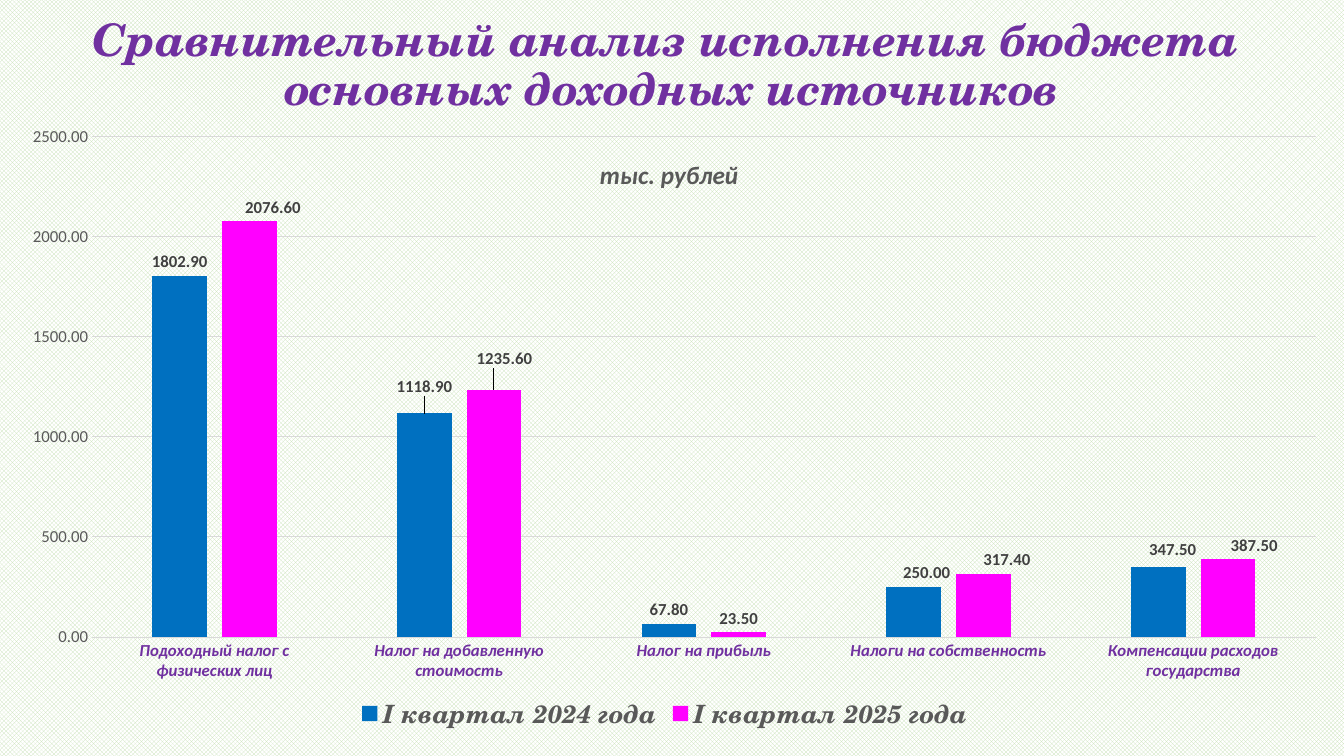
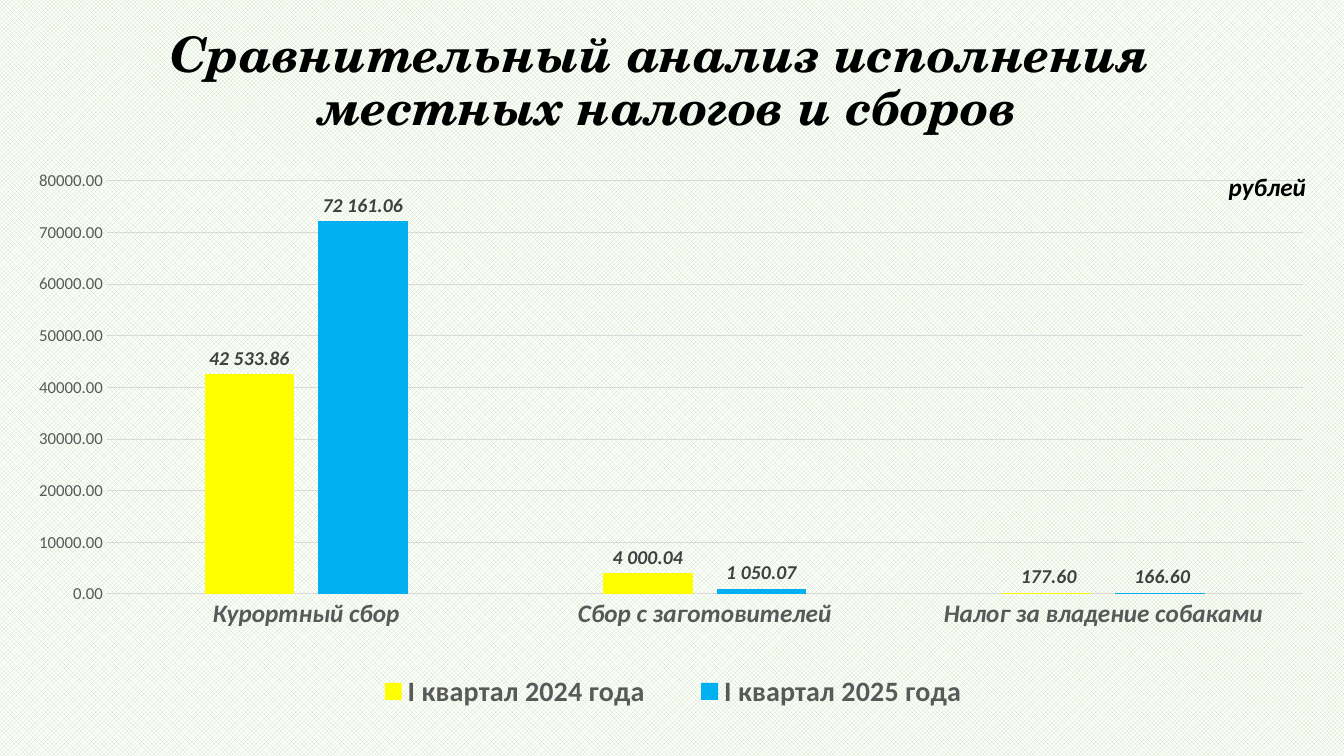
"""Build two slides comparing budget revenues of the first quarters of 2024 and 2025."""
from dataclasses import dataclass, field

import lxml.etree
import pptx
import pptx.chart.chart
import pptx.chart.data
import pptx.dml.color
import pptx.enum.chart
import pptx.enum.dml
import pptx.enum.text
import pptx.oxml.ns
import pptx.slide
import pptx.text.text
import pptx.util

RGBColor = pptx.dml.color.RGBColor
Cm = pptx.util.Cm
Pt = pptx.util.Pt

BLACK = RGBColor(0x00, 0x00, 0x00)
WHITE = RGBColor(0xFF, 0xFF, 0xFF)
PALE_GREEN = RGBColor(0xC5, 0xE0, 0xB4)
PURPLE = RGBColor(0x70, 0x30, 0xA0)
GRAY = RGBColor(0x59, 0x59, 0x59)
DARK_GRAY = RGBColor(0x40, 0x40, 0x40)
LIGHT_GRAY = RGBColor(0xD9, 0xD9, 0xD9)
BLUE = RGBColor(0x00, 0x70, 0xC0)
MAGENTA = RGBColor(0xFF, 0x00, 0xFF)
YELLOW = RGBColor(0xFF, 0xFF, 0x00)
SKY_BLUE = RGBColor(0x00, 0xB0, 0xF0)

BODY_FONT = "Calibri"
DISPLAY_FONT = "TeX Gyre Schola"
AXIS_FORMAT = "0.00"
PERIODS = ("I квартал 2024 года", "I квартал 2025 года")

Box = tuple[float, float, float, float]


@dataclass(frozen=True)
class TextStyle:
    """Character formatting of one kind of text."""
    size: float
    color: RGBColor
    bold: bool = True
    italic: bool = True
    name: str = BODY_FONT


@dataclass(frozen=True)
class Series:
    """Values of one period, with label offsets by point."""
    values: tuple[float, ...]
    color: RGBColor
    label_offsets: dict[int, tuple[float, float]] = field(default_factory=dict)


@dataclass(frozen=True)
class ChartSlide:
    """Content and geometry of one slide, boxes in centimetres."""
    title_lines: tuple[str, ...]
    title_style: TextStyle
    title_box: Box
    chart_box: Box
    plot_layout: Box
    unit: str
    unit_style: TextStyle
    unit_position: tuple[float, float]
    categories: tuple[str, ...]
    series: tuple[Series, ...]
    axis_maximum: float
    axis_step: float
    category_style: TextStyle
    label_style: TextStyle
    label_format: str
    legend_style: TextStyle
    legend_layout: Box | None = None


SLIDES = (
    ChartSlide(
        title_lines=("Сравнительный анализ исполнения бюджета ", "основных доходных источников"),
        title_style=TextStyle(32, PURPLE, name=DISPLAY_FONT),
        title_box=(0, 0, 33.87, 3.35),
        chart_box=(0.28, 3, 32.94, 15.6),
        plot_layout=(0.062, 0.028, 0.936, 0.809),
        unit="тыс. рублей",
        unit_style=TextStyle(18, GRAY),
        unit_position=(0.447, 0.055),
        categories=(
            "Подоходный налог с физических лиц",
            "Налог на добавленную стоимость",
            "Налог на прибыль",
            "Налоги на собственность",
            "Компенсации расходов государства",
        ),
        series=(
            Series((1802.9, 1118.9, 67.8, 250, 347.5), BLUE,
                   {1: (0, -0.02), 3: (0.01, 0), 4: (0.011, -0.006)}),
            Series((2076.6, 1235.6, 23.5, 317.4, 387.5), MAGENTA,
                   {0: (0.018, 0), 1: (0.008, -0.027), 3: (0.018, 0), 4: (0.02, 0)}),
        ),
        axis_maximum=2500,
        axis_step=500,
        category_style=TextStyle(12, PURPLE),
        label_style=TextStyle(12, DARK_GRAY, italic=False),
        label_format="0.00",
        legend_style=TextStyle(18, GRAY, name=DISPLAY_FONT),
    ),
    ChartSlide(
        title_lines=("Сравнительный анализ исполнения ", "местных налогов и сборов"),
        title_style=TextStyle(35, BLACK, name=DISPLAY_FONT),
        title_box=(1.09, 0, 31.47, 4.17),
        chart_box=(0.71, 3.81, 32.51, 14.96),
        plot_layout=(0.061, 0.05, 0.927, 0.696),
        unit="рублей",
        unit_style=TextStyle(18, BLACK),
        unit_position=(0.927, 0.023),
        categories=("Курортный сбор", "Сбор с заготовителей", "Налог за владение собаками"),
        series=(
            Series((42533.86, 4000.04, 177.6), YELLOW),
            Series((72161.06, 1050.07, 166.6), SKY_BLUE),
        ),
        axis_maximum=80000,
        axis_step=10000,
        category_style=TextStyle(18, GRAY),
        label_style=TextStyle(14, DARK_GRAY),
        label_format='#" "##0.00',
        legend_style=TextStyle(20, GRAY, italic=False),
        legend_layout=(0.24, 0.87, 0.52, 0.08),
    ),
)


def apply_style(font: pptx.text.text.Font, style: TextStyle) -> None:
    """Apply a text style to a font."""
    font.name = style.name
    font.size = Pt(style.size)
    font.bold = style.bold
    font.italic = style.italic
    font.color.rgb = style.color


def set_layout(parent: lxml.etree.ElementBase, predecessor: str | None,
               values: tuple[float, ...], edge: bool = True, inner: bool = False) -> None:
    """Give a chart part a manual layout, placed after the named child."""
    qn = pptx.oxml.ns.qn
    for old_layout in parent.findall(qn("c:layout")):
        parent.remove(old_layout)
    layout = lxml.etree.Element(qn("c:layout"))
    manual = lxml.etree.SubElement(layout, qn("c:manualLayout"))
    settings = [("layoutTarget", "inner")] if inner else []
    if edge:
        settings += [("xMode", "edge"), ("yMode", "edge")]
    settings += zip("xywh", map(str, values))
    for tag, value in settings:
        lxml.etree.SubElement(manual, qn(f"c:{tag}")).set("val", value)
    if predecessor is None:
        parent.insert(0, layout)
    else:
        parent.find(qn(predecessor)).addnext(layout)


def add_title(slide: pptx.slide.Slide, content: ChartSlide) -> None:
    """Add the centred slide title."""
    text_frame = slide.shapes.add_textbox(*map(Cm, content.title_box)).text_frame
    text_frame.word_wrap = True
    text_frame.vertical_anchor = pptx.enum.text.MSO_ANCHOR.MIDDLE
    paragraph = text_frame.paragraphs[0]
    paragraph.alignment = pptx.enum.text.PP_ALIGN.CENTER
    paragraph.line_spacing = 0.9
    for index, line in enumerate(content.title_lines):
        if index:
            paragraph.add_line_break()
        run = paragraph.add_run()
        run.text = line
        apply_style(run.font, content.title_style)


def format_axes(chart: pptx.chart.chart.Chart, content: ChartSlide) -> None:
    """Format both axes and the gridlines."""
    category_axis, value_axis = chart.category_axis, chart.value_axis
    value_style = TextStyle(12, GRAY, bold=False, italic=False)
    for axis, style in ((category_axis, content.category_style), (value_axis, value_style)):
        axis.major_tick_mark = pptx.enum.chart.XL_TICK_MARK.NONE
        axis.minor_tick_mark = pptx.enum.chart.XL_TICK_MARK.NONE
        apply_style(axis.tick_labels.font, style)
    value_axis.minimum_scale = 0
    value_axis.maximum_scale = content.axis_maximum
    value_axis.major_unit = content.axis_step
    value_axis.tick_labels.number_format = AXIS_FORMAT
    value_axis.tick_labels.number_format_is_linked = False
    value_axis.format.line.fill.background()
    value_axis.has_major_gridlines = True
    for line in (category_axis.format.line, value_axis.major_gridlines.format.line):
        line.color.rgb = LIGHT_GRAY
        line.width = Pt(0.75)


def format_series(chart: pptx.chart.chart.Chart, content: ChartSlide) -> None:
    """Colour the columns and place their value labels."""
    outside_end = pptx.enum.chart.XL_LABEL_POSITION.OUTSIDE_END
    plot = chart.plots[0]
    plot.gap_width = 219
    plot.overlap = -27
    plot.vary_by_categories = False
    for number, (series, data) in enumerate(zip(plot.series, content.series)):
        series.format.fill.solid()
        series.format.fill.fore_color.rgb = data.color
        series.invert_if_negative = False
        labels = series.data_labels
        labels.show_value = True
        labels.position = outside_end
        labels.number_format = content.label_format
        labels.number_format_is_linked = False
        apply_style(labels.font, content.label_style)
        for point, offset in data.label_offsets.items():
            label = series.points[point].data_label
            apply_style(label.font, content.label_style)
            label.position = outside_end
            element = chart.element.xpath(
                f'.//c:ser[c:idx/@val="{number}"]//c:dLbl[c:idx/@val="{point}"]')[0]
            set_layout(element, "c:idx", offset, edge=False)
            number_format = lxml.etree.Element(pptx.oxml.ns.qn("c:numFmt"))
            number_format.set("formatCode", content.label_format)
            number_format.set("sourceLinked", "0")
            element.find(pptx.oxml.ns.qn("c:layout")).addnext(number_format)


def add_column_chart(slide: pptx.slide.Slide, content: ChartSlide) -> None:
    """Add the clustered column chart with its unit caption and legend."""
    chart_data = pptx.chart.data.CategoryChartData(number_format=AXIS_FORMAT)
    chart_data.categories = content.categories
    for period, series in zip(PERIODS, content.series):
        chart_data.add_series(period, series.values)
    chart = slide.shapes.add_chart(
        pptx.enum.chart.XL_CHART_TYPE.COLUMN_CLUSTERED,
        *map(Cm, content.chart_box), chart_data).chart
    apply_style(chart.font, TextStyle(10, BLACK, bold=False, italic=False))
    format_axes(chart, content)
    format_series(chart, content)
    set_layout(chart.element.xpath(".//c:plotArea")[0], None, content.plot_layout, inner=True)

    chart.has_title = True
    run = chart.chart_title.text_frame.paragraphs[0].add_run()
    run.text = content.unit
    apply_style(run.font, content.unit_style)
    set_layout(chart.element.xpath(".//c:chart/c:title")[0], "c:tx", content.unit_position)

    chart.has_legend = True
    chart.legend.position = pptx.enum.chart.XL_LEGEND_POSITION.BOTTOM
    chart.legend.include_in_layout = False
    apply_style(chart.legend.font, content.legend_style)
    if content.legend_layout:
        set_layout(chart.element.xpath(".//c:legend")[0], "c:legendPos", content.legend_layout)


def add_slide(presentation: pptx.presentation.Presentation, content: ChartSlide) -> None:
    """Add one slide with the shared background, a title and a chart."""
    slide = presentation.slides.add_slide(presentation.slide_layouts[6])
    fill = slide.background.fill
    fill.patterned()
    fill.pattern = pptx.enum.dml.MSO_PATTERN.TRELLIS
    fill.fore_color.rgb = PALE_GREEN
    fill.back_color.rgb = WHITE
    add_title(slide, content)
    add_column_chart(slide, content)


def main() -> None:
    """Build and save the presentation."""
    presentation = pptx.Presentation()
    presentation.slide_width = Cm(33.87)
    presentation.slide_height = Cm(19.05)
    for content in SLIDES:
        add_slide(presentation, content)
    presentation.save("out.pptx")


if __name__ == "__main__":
    main()
